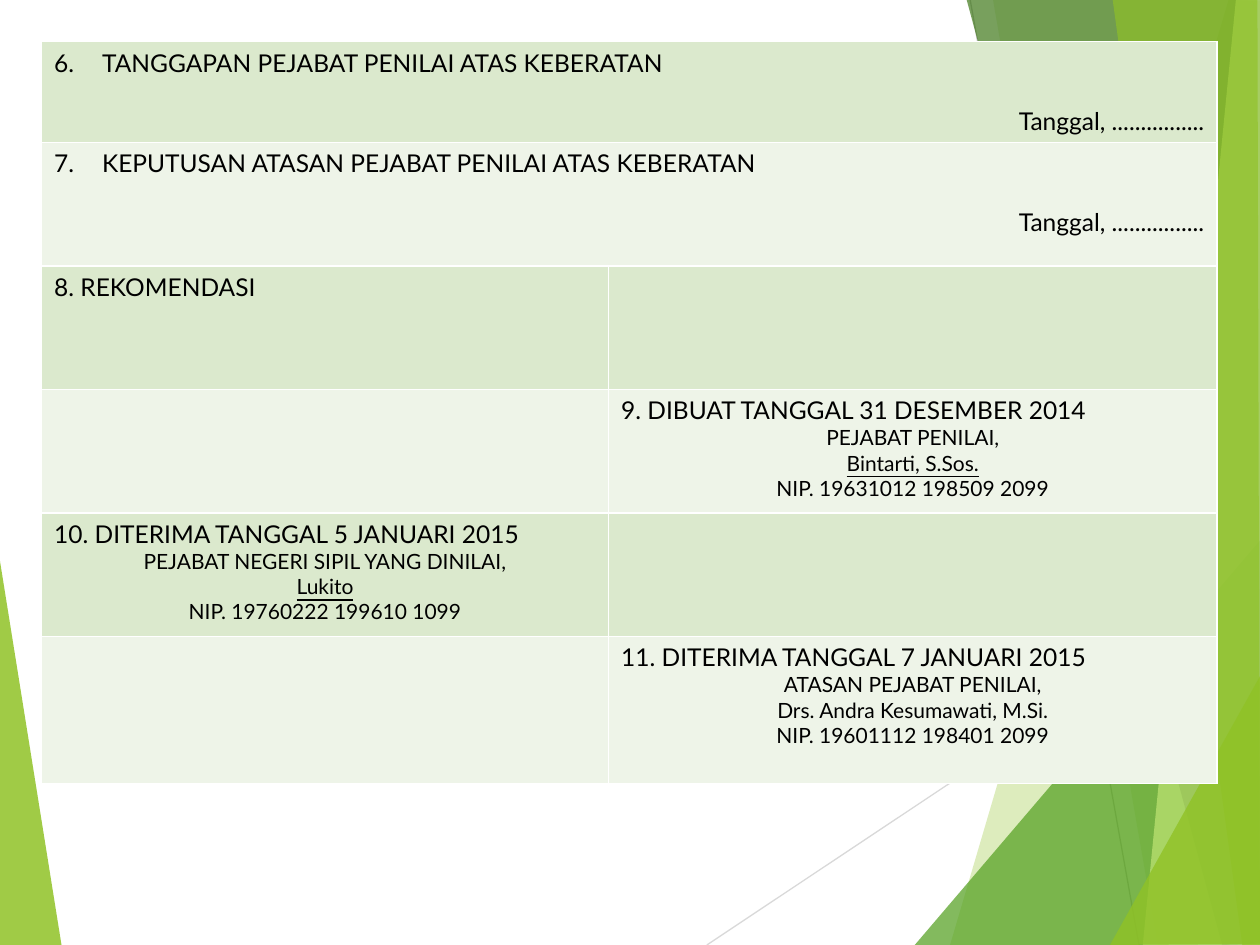
from dataclasses import dataclass

from lxml.etree import SubElement
from pptx import Presentation
from pptx.dml.color import RGBColor
from pptx.enum.shapes import MSO_CONNECTOR as Connector
from pptx.enum.text import PP_ALIGN as Align
from pptx.oxml.ns import qn
from pptx.util import Inches, Pt


@dataclass(frozen=True)
class Theme:
    font: str = "Lato"
    heading: float = 14
    detail: float = 12
    blank_line: float = 16.8
    text: str = "000000"
    border: str = "FFFFFF"
    bands: tuple = ("DBE9CD", "EEF4E8")
    green: str = "90C226"
    leaf: str = "54A021"
    forest: str = "3F7819"
    lime: str = "C0E474"


THEME = Theme()
INDENT = 0.38
COLUMNS = (4.5, 4.83)
ROWS = (0.8, 0.98, 0.98, 0.98, 0.98, 1.17)

LEFT_FACET = (((-0.01, 4.39), (0.49, 7.51), (-0.01, 7.5)), THEME.green, 85)
RAYS = (
    ((5.61, 7.5), (10.01, 4.57), "D9D9D9"),
    ((7.7, 0), (9.04, 7.5), "BFBFBF"),
)
RIGHT_FACETS = (
    (((9.75, 0), (7.54, 7.5), (10.02, 7.51), (10.01, 0.01)), THEME.green, 30),
    (((7.88, -0.01), (9.19, 7.5), (10.01, 7.5), (10.01, -0.01)), THEME.green, 20),
    (((7.26, 7.5), (10, 4.29), (10.01, 7.5)), THEME.leaf, 72),
    (((7.67, -0.01), (9.7, 7.5), (10.01, 7.49), (10.01, -0.01)), THEME.forest, 70),
    (((9.81, -0.01), (9.07, 7.5), (10.01, 7.5), (10, -0.01)), THEME.lime, 70),
    (((8.83, -0.01), (9.86, 7.5), (10, 7.5), (9.98, -0.01)), THEME.green, 65),
    (((8.81, 7.5), (10.01, 5.35), (10.01, 7.49)), THEME.green, 80),
)


def heading(text, number=None):
    return {"text": text, "number": number}


def date_line():
    return {"text": "Tanggal, ................", "alignment": Align.RIGHT,
            "space_before": Pt(THEME.blank_line)}


def signature(title, role, name, number, underline=True):
    """Heading followed by the centred role, name and staff number."""
    centred = {"alignment": Align.CENTER, "size": THEME.detail}
    return [
        heading(title),
        {"text": role, **centred},
        {"text": name, "underline": underline, **centred},
        {"text": f"NIP. {number}", **centred},
    ]


# (row, column): paragraphs
CONTENT = {
    (0, 0): [heading("TANGGAPAN PEJABAT PENILAI ATAS KEBERATAN", 6), date_line()],
    (1, 0): [heading("KEPUTUSAN ATASAN PEJABAT PENILAI ATAS KEBERATAN", 7), date_line()],
    (2, 0): [heading("8. REKOMENDASI")],
    (3, 1): signature("9. DIBUAT TANGGAL 31 DESEMBER 2014", "PEJABAT PENILAI,",
                      "Bintarti, S.Sos.", "19631012 198509 2099"),
    (4, 0): signature("10. DITERIMA TANGGAL 5 JANUARI 2015",
                      "PEJABAT NEGERI SIPIL YANG DINILAI,",
                      "Lukito", "19760222 199610 1099"),
    (5, 1): signature("11. DITERIMA TANGGAL 7 JANUARI 2015", "ATASAN PEJABAT PENILAI,",
                      "Drs. Andra Kesumawati, M.Si.", "19601112 198401 2099",
                      underline=False),
}


def set_values(target, values):
    for name, value in values.items():
        setattr(target, name, value)


def add_facet(slide, points, color, opacity):
    corners = [(Inches(x), Inches(y)) for x, y in points]
    builder = slide.shapes.build_freeform(*corners[0])
    builder.add_line_segments(corners[1:], close=True)
    shape = builder.convert_to_shape()
    shape.shadow.inherit = False
    shape.line.fill.background()
    shape.fill.solid()
    shape.fill.fore_color.rgb = RGBColor.from_string(color)
    fill_color = shape._element.spPr.find(qn("a:solidFill"))[0]
    SubElement(fill_color, qn("a:alpha"), val=str(opacity * 1000))


def add_ray(slide, start, end, color):
    ends = [Inches(value) for value in (*start, *end)]
    line = slide.shapes.add_connector(Connector.STRAIGHT, *ends)
    line.line.color.rgb = RGBColor.from_string(color)
    line.line.width = Pt(0.75)
    SubElement(line._element.spPr, qn("a:effectLst"))


def add_background(slide):
    add_facet(slide, *LEFT_FACET)
    for ray in RAYS:
        add_ray(slide, *ray)
    for facet in RIGHT_FACETS:
        add_facet(slide, *facet)


def style_cell(cell, color):
    cell.fill.solid()
    cell.fill.fore_color.rgb = RGBColor.from_string(color)
    properties = cell._tc.get_or_add_tcPr()
    for position, side in enumerate(("lnL", "lnR", "lnT", "lnB")):
        border = SubElement(properties, qn(f"a:{side}"), w=str(Pt(1)))
        fill = SubElement(border, qn("a:solidFill"))
        SubElement(fill, qn("a:srgbClr"), val=THEME.border)
        properties.insert(position, border)


def write_paragraph(paragraph, text, number=None, size=THEME.heading,
                    underline=False, **layout):
    set_values(paragraph, layout)
    properties = paragraph._p.get_or_add_pPr()
    properties.set("marL", str(Inches(INDENT)))
    properties.set("indent", str(-Inches(INDENT)))
    if number is not None:
        SubElement(properties, qn("a:buAutoNum"), type="arabicPeriod",
                   startAt=str(number))
    run = paragraph.add_run()
    run.text = text
    set_values(run.font, {"name": THEME.font, "size": Pt(size), "bold": False,
                          "underline": underline})
    run.font.color.rgb = RGBColor.from_string(THEME.text)


def add_form_table(slide, left, top, width, height):
    frame = slide.shapes.add_table(len(ROWS), len(COLUMNS), *map(
        Inches, (left, top, width, height)))
    table = frame.table
    set_values(table, {"first_row": False, "horz_banding": False})
    for column, share in zip(table.columns, COLUMNS):
        column.width = Inches(width * share / sum(COLUMNS))
    for row, share in zip(table.rows, ROWS):
        row.height = Inches(height * share / sum(ROWS))
    for row_index, row in enumerate(table.rows):
        for cell in row.cells:
            style_cell(cell, THEME.bands[row_index % 2])
    for row_index in (0, 1):
        table.cell(row_index, 0).merge(table.cell(row_index, 1))
    for position, paragraphs in CONTENT.items():
        text_frame = table.cell(*position).text_frame
        for index, values in enumerate(paragraphs):
            paragraph = text_frame.add_paragraph() if index else text_frame.paragraphs[0]
            write_paragraph(paragraph, **values)


def main():
    presentation = Presentation()
    set_values(presentation, {"slide_width": Inches(10), "slide_height": Inches(7.5)})
    slide = presentation.slides.add_slide(presentation.slide_layouts[6])
    add_background(slide)
    add_form_table(slide, 0.33, 0.33, sum(COLUMNS), sum(ROWS))
    presentation.save("out.pptx")


if __name__ == "__main__":
    main()
